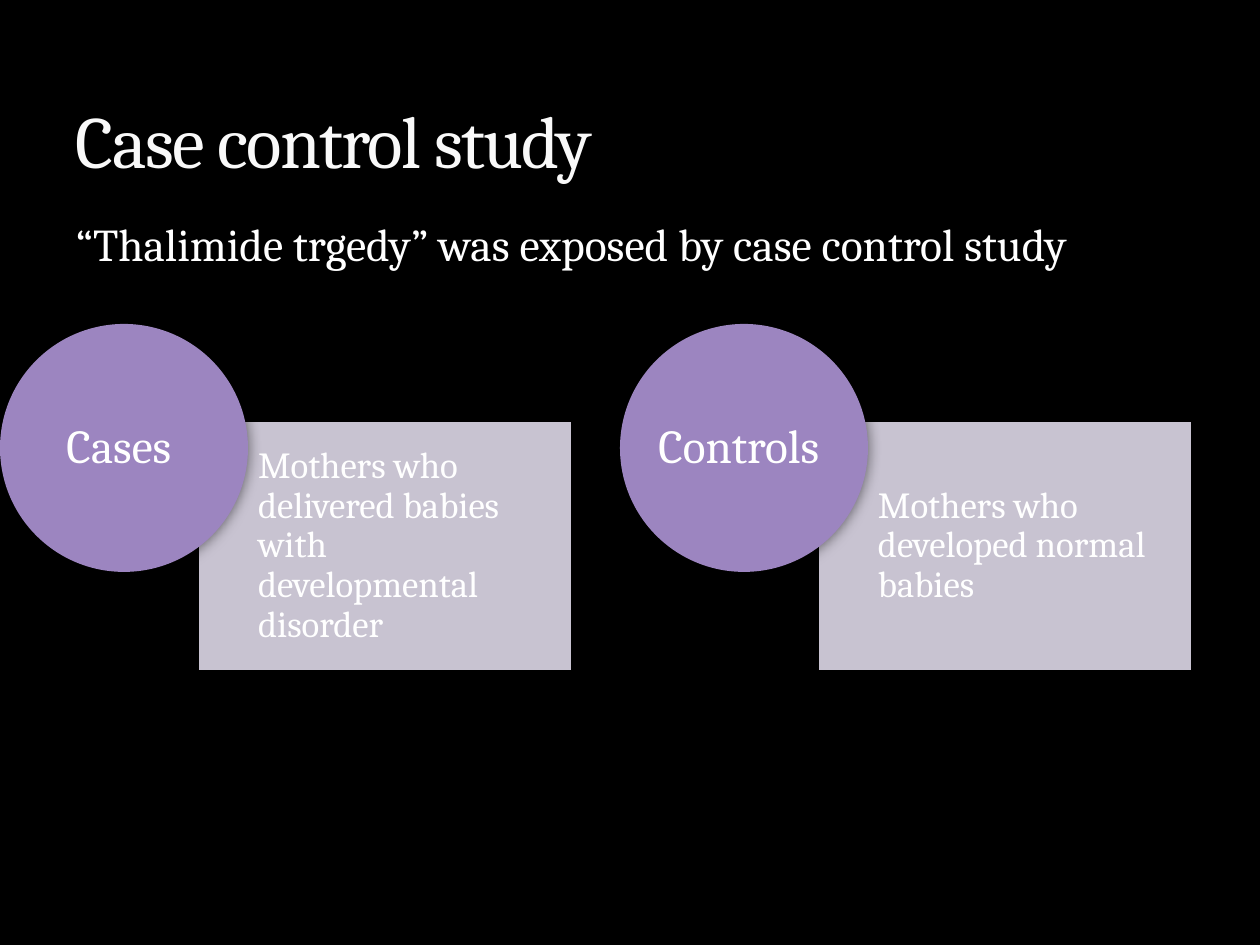
from dataclasses import dataclass

from lxml import etree
from pptx import Presentation
from pptx import util as u
from pptx.dml.color import RGBColor
from pptx.enum import shapes, text
from pptx.oxml import ns, parse_xml

PX = 914400 // 126
FONT = "Cambria"
COLORS = {
    "background": "000000",
    "title": "F9F9F9",
    "text": "FFFFFF",
    "circle": "9C85C0",
    "panel": "DED9E8",
}

# Group geometry in px
DIAMETER = 248
PANEL_W, PANEL_H = 372, 248
PANEL_DX, PANEL_DY = 199, 98
GROUP_TOP, GROUP_PITCH = 324, 620


@dataclass
class Group:
    label: str
    description: str


@dataclass
class Style:
    size: int
    color: str = "text"
    align: text.PP_ALIGN = text.PP_ALIGN.LEFT
    anchor: text.MSO_ANCHOR = text.MSO_ANCHOR.TOP
    insets: tuple[int, int, int, int] = (13, 6, 13, 6)
    spacing: float = 1.0


GROUPS = [
    Group("Cases ", "Mothers who delivered babies with developmental disorder"),
    Group("Controls ", "Mothers who developed normal babies"),
]
TITLE = Style(42, "title", anchor=text.MSO_ANCHOR.BOTTOM)
BODY = Style(26)
LABEL = Style(27, align=text.PP_ALIGN.CENTER, anchor=text.MSO_ANCHOR.MIDDLE,
              insets=(0, 0, 0, 0), spacing=0.9)
DESCRIPTION = Style(21, anchor=text.MSO_ANCHOR.MIDDLE,
                    insets=(59, 20, 20, 20), spacing=0.9)


def px(*values: int) -> list[int]:
    return [v * PX for v in values]


def rgb(name: str) -> RGBColor:
    return RGBColor.from_string(COLORS[name])


def write(sp, words: str, style: Style):
    """Put one styled paragraph in a shape and return it."""
    tf = sp.text_frame
    tf.word_wrap = True
    tf.vertical_anchor = style.anchor
    (tf.margin_left, tf.margin_top,
     tf.margin_right, tf.margin_bottom) = px(*style.insets)
    tf.text = words
    p = tf.paragraphs[0]
    p.alignment = style.align
    p.line_spacing = style.spacing
    font = p.runs[0].font
    font.name, font.size = FONT, u.Pt(style.size)
    font.color.rgb = rgb(style.color)
    return p


def add_filled(s, kind: shapes.MSO_SHAPE, box: tuple[int, ...], color: str):
    sp = s.shapes.add_shape(kind, *px(*box))
    sp.shadow.inherit = False
    sp.fill.solid()
    sp.fill.fore_color.rgb = rgb(color)
    sp.line.fill.background()
    return sp


def set_opacity(sp, percent: int) -> None:
    color = sp._element.spPr.find(".//" + ns.qn("a:srgbClr"))
    etree.SubElement(color, ns.qn("a:alpha"), val=str(percent * 1000))


def add_soft_shadow(sp) -> None:
    effects = sp._element.spPr.find(ns.qn("a:effectLst"))
    effects.append(parse_xml(
        f'<a:outerShdw {ns.nsdecls("a")} blurRad="{u.Pt(7.5)}" dist="0" dir="0" '
        'rotWithShape="0"><a:srgbClr val="000000"><a:alpha val="50000"/>'
        "</a:srgbClr></a:outerShdw>"))


def add_group(s, group: Group, left: int) -> None:
    panel = add_filled(s, shapes.MSO_SHAPE.RECTANGLE,
                       (left + PANEL_DX, GROUP_TOP + PANEL_DY, PANEL_W, PANEL_H), "panel")
    set_opacity(panel, 90)
    write(panel, group.description, DESCRIPTION)
    circle = add_filled(s, shapes.MSO_SHAPE.OVAL,
                        (left, GROUP_TOP, DIAMETER, DIAMETER), "circle")
    add_soft_shadow(circle)
    write(circle, group.label, LABEL)


def main() -> None:
    prs = Presentation()
    prs.slide_width, prs.slide_height = px(1260, 945)
    s = prs.slides.add_slide(prs.slide_layouts[6])
    s.background.fill.solid()
    s.background.fill.fore_color.rgb = rgb("background")

    # Cases and controls
    for i, group in enumerate(GROUPS):
        add_group(s, group, i * GROUP_PITCH)

    # Statement with a hanging indent
    body = s.shapes.add_textbox(*px(63, 210, 1134, 630))
    p = write(body, "“Thalimide trgedy” was exposed by case control study", BODY)
    p.space_before = u.Pt(6)
    pPr = p._p.get_or_add_pPr()
    pPr.set("marL", str(38 * PX))
    pPr.set("indent", str(-38 * PX))

    # Title with tightened letters
    title = s.shapes.add_textbox(*px(63, 21, 1134, 168))
    p = write(title, "Case control study", TITLE)
    p.runs[0].font._element.set("spc", "-100")

    prs.save("out.pptx")


if __name__ == "__main__":
    main()
